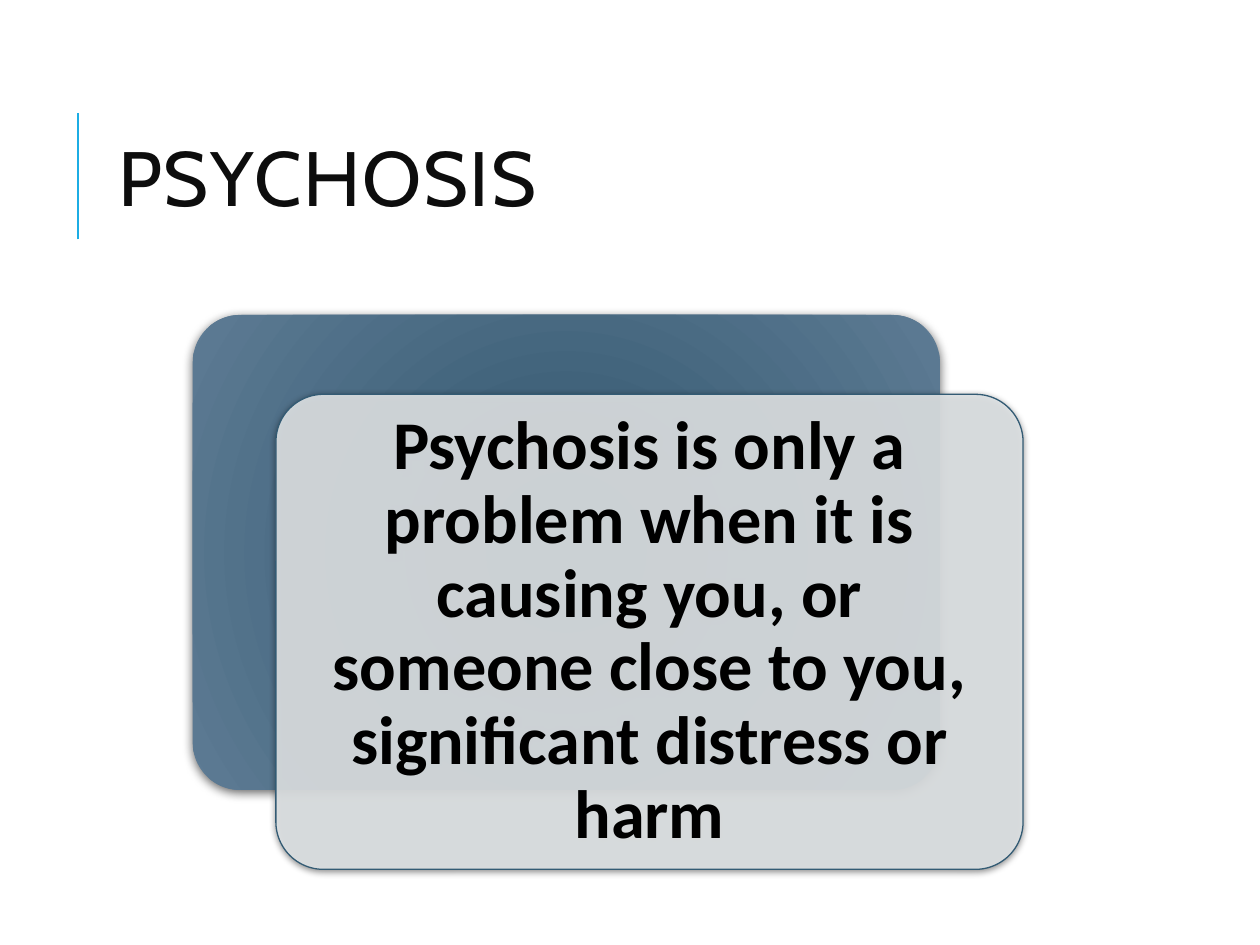
from dataclasses import dataclass

from pptx import Presentation
from pptx.dml.color import RGBColor
from pptx.enum.shapes import MSO_CONNECTOR, MSO_SHAPE
from pptx.enum.text import MSO_ANCHOR, PP_ALIGN
from pptx.oxml import parse_xml
from pptx.oxml.ns import nsdecls, qn
from pptx.shapes.autoshape import Shape
from pptx.slide import Slide
from pptx.util import Inches, Pt

ACCENT = RGBColor(0x1C, 0xAD, 0xE4)
TITLE_COLOR = RGBColor(0x0D, 0x0D, 0x0D)
GRADIENT_COLORS = (RGBColor(0x30, 0x55, 0x6C), RGBColor(0x5D, 0x7B, 0x94))
CARD_FILL = RGBColor(0xDF, 0xE3, 0xE5)
CARD_LINE = RGBColor(0x33, 0x5B, 0x74)
BLACK = RGBColor(0, 0, 0)
CARD_WIDTH, CARD_HEIGHT = 5.93, 3.77
MESSAGE = (
    "Psychosis is only a problem when it is causing you, or "
    "someone close to you, significant distress or harm"
)


@dataclass(frozen=True)
class Card:
    """Position and shadow of a rounded card, in inches, percent and points."""

    left: float
    top: float
    shadow_opacity: int
    shadow_blur: int
    shadow_distance: int


BACK_CARD = Card(1.53, 2.5, 60, 6, 2)
FRONT_CARD = Card(2.19, 3.13, 50, 4, 1)


def add_card(slide: Slide, card: Card) -> Shape:
    """Add a rounded rectangle with a downward shadow."""
    shape = slide.shapes.add_shape(
        MSO_SHAPE.ROUNDED_RECTANGLE,
        Inches(card.left), Inches(card.top), Inches(CARD_WIDTH), Inches(CARD_HEIGHT),
    )
    shape.adjustments[0] = 0.1
    shape.shadow.inherit = False
    shape._element.spPr.find(qn("a:effectLst")).append(parse_xml(
        f'<a:outerShdw {nsdecls("a")} blurRad="{Pt(card.shadow_blur)}" '
        f'dist="{Pt(card.shadow_distance)}" dir="5400000" rotWithShape="0">'
        f'<a:srgbClr val="{BLACK}"><a:alpha val="{card.shadow_opacity * 1000}"/>'
        "</a:srgbClr></a:outerShdw>"
    ))
    return shape


def fill_radially(shape: Shape) -> None:
    """Give the shape a circular gradient and no outline."""
    shape.line.fill.background()
    shape.fill.gradient()
    for stop, color, position in zip(shape.fill.gradient_stops, GRADIENT_COLORS, (0, 1)):
        stop.color.rgb = color
        stop.position = position
    gradient = shape._element.spPr.find(qn("a:gradFill"))
    gradient.replace(gradient.find(qn("a:lin")), parse_xml(
        f'<a:path {nsdecls("a")} path="circle">'
        '<a:fillToRect l="100000" t="100000" r="100000" b="100000"/></a:path>'
    ))


def fill_translucently(shape: Shape) -> None:
    """Give the shape a pale fill at 90 percent opacity and a thin outline."""
    shape.fill.solid()
    shape.fill.fore_color.rgb = CARD_FILL
    color = shape._element.spPr.find(qn("a:solidFill")).find(qn("a:srgbClr"))
    color.append(parse_xml(f'<a:alpha {nsdecls("a")} val="90000"/>'))
    shape.line.color.rgb = CARD_LINE
    shape.line.width = Pt(0.75)


def write_message(shape: Shape) -> None:
    """Write the centred message inside the card."""
    frame = shape.text_frame
    frame.word_wrap = True
    frame.vertical_anchor = MSO_ANCHOR.MIDDLE
    frame.margin_left = frame.margin_right = Inches(0.16)
    frame.margin_top = frame.margin_bottom = Inches(0.16)
    paragraph = frame.paragraphs[0]
    paragraph.text = MESSAGE
    paragraph.alignment = PP_ALIGN.CENTER
    paragraph.line_spacing = 0.9
    paragraph.font.name = "Calibri"
    paragraph.font.size = Pt(39)
    paragraph.font.bold = True
    paragraph.font.color.rgb = BLACK


def add_title(slide: Slide) -> None:
    """Add the title and the accent rule beside it."""
    rule = slide.shapes.add_connector(
        MSO_CONNECTOR.STRAIGHT, Inches(0.62), Inches(1.9), Inches(0.62), Inches(0.9)
    )
    rule.line.color.rgb = ACCENT
    rule.line.width = Pt(1.5)
    rule._element.spPr.append(parse_xml(f'<a:effectLst {nsdecls("a")}/>'))
    title = slide.shapes.add_textbox(Inches(0.84), Inches(0.64), Inches(7.97), Inches(1.64))
    frame = title.text_frame
    frame.word_wrap = True
    frame.vertical_anchor = MSO_ANCHOR.MIDDLE
    paragraph = frame.paragraphs[0]
    paragraph.text = "PSYCHOSIS"
    paragraph.line_spacing = 0.8
    paragraph.font.name = "Cabin"
    paragraph.font.size = Pt(44)
    paragraph.font.color.rgb = TITLE_COLOR
    paragraph.runs[0]._r.get_or_add_rPr().set("spc", "100")


def main() -> None:
    """Build and save the slide."""
    presentation = Presentation()
    presentation.slide_width = Inches(10)
    presentation.slide_height = Inches(7.5)
    slide = presentation.slides.add_slide(presentation.slide_layouts[6])
    add_title(slide)
    fill_radially(add_card(slide, BACK_CARD))
    front = add_card(slide, FRONT_CARD)
    fill_translucently(front)
    write_message(front)
    presentation.save("out.pptx")


if __name__ == "__main__":
    main()
